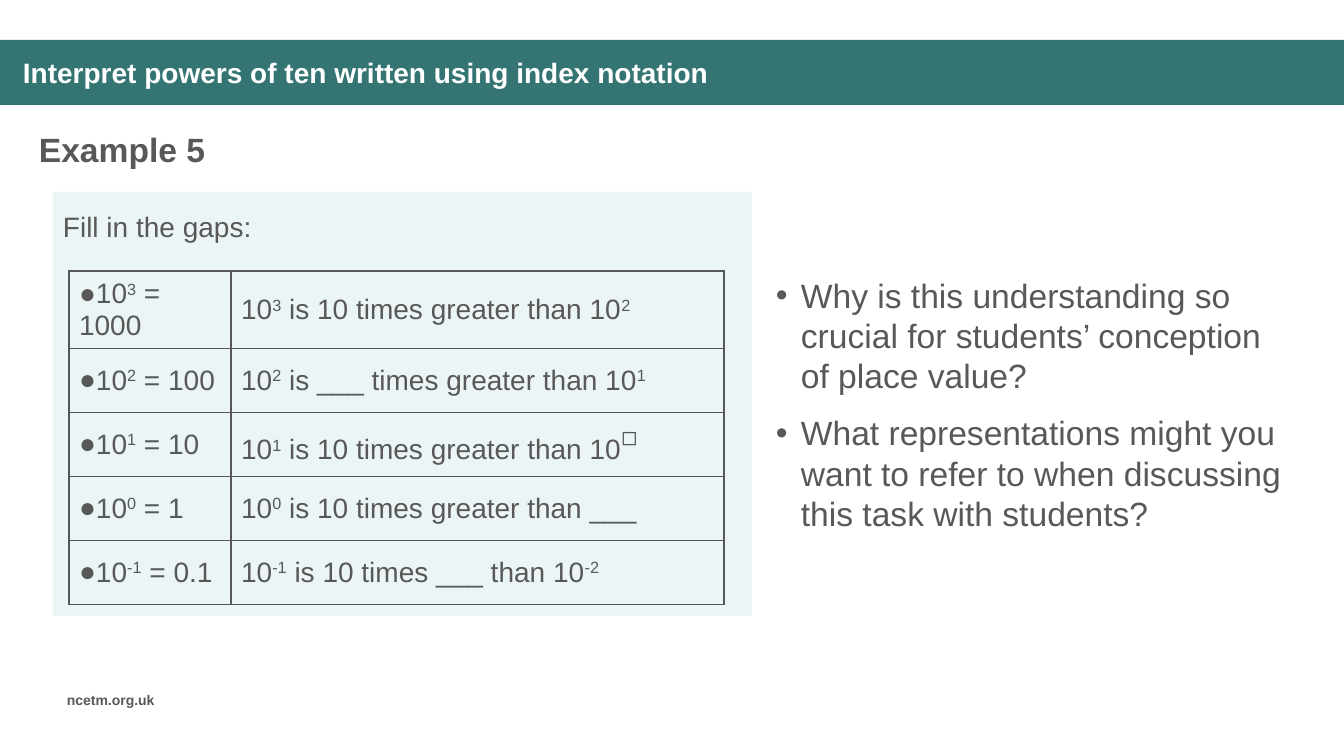
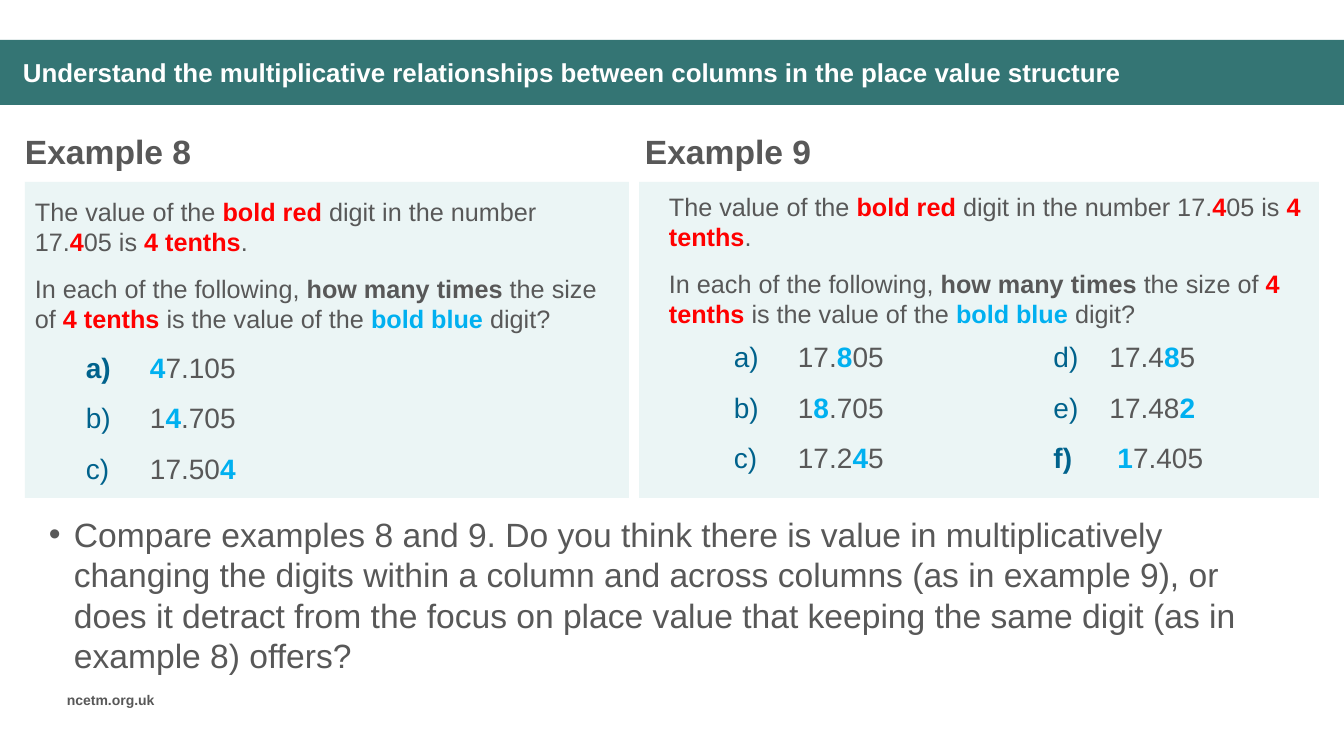
import dataclasses
import typing

import pptx
import pptx.dml.color
import pptx.enum.shapes
import pptx.enum.text
import pptx.oxml.ns
import pptx.util
from lxml import etree

EMU_PER_PIXEL = 914400 / 100.8
ANCHOR = pptx.enum.text.MSO_ANCHOR


@dataclasses.dataclass(frozen=True)
class Theme:
    font: str = "Arial"
    band: str = "347574"
    panel: str = "EBF5F5"
    text: str = "585858"
    white: str = "FFFFFF"
    number: str = "00628C"
    red: str = "FF0000"
    blue: str = "00B0F0"
    heading_size: float = 24
    body_size: float = 24
    list_size: float = 20
    question_size: float = 18
    footer_size: float = 10
    box_size: float = 32
    leading: float = 1.2
    gap: float = 12


THEME = Theme()


class Box(typing.NamedTuple):
    left: int
    top: int
    width: int
    height: int


class Run(typing.NamedTuple):
    text: str
    colour: str | None = None
    bold: bool | None = None
    raised: bool = False
    size: float | None = None


@dataclasses.dataclass(frozen=True)
class Marker:
    """A bullet character, or a letter sequence when character is None."""
    character: str | None
    margin: int = 0
    hanging: int = 0
    colour: str | None = None


@dataclasses.dataclass(frozen=True)
class Paragraph:
    runs: tuple[Run, ...]
    size: float
    marker: Marker | None = None
    colour: str = THEME.text
    bold: bool = False
    after: float = 0
    leading: float | None = THEME.leading


BODY_BULLET = Marker("•", 39, 25)
CELL_BULLET = Marker("●")
LETTER = Marker(None, 115, 64, THEME.number)
NEAR_LETTER = Marker(None, 107, 56, THEME.number)


# Units and colours
def px(length: float) -> int:
    return round(length * EMU_PER_PIXEL)


def rgb(colour: str) -> pptx.dml.color.RGBColor:
    return pptx.dml.color.RGBColor.from_string(colour)


def add_element(parent, tag: str, **attributes: str):
    element = etree.SubElement(parent, pptx.oxml.ns.qn(tag))
    for name, value in attributes.items():
        element.set(name, value)
    return element


# Text
def marked(text: str, **style) -> tuple[Run, ...]:
    """Split at bars; every second piece takes the given style."""
    pieces = enumerate(text.split("|"))
    return tuple(Run(piece, **(style if index % 2 else {}))
                 for index, piece in pieces if piece)


def red(text: str) -> Run:
    return Run(text, THEME.red, True)


def blue(text: str) -> Run:
    return Run(text, THEME.blue, True)


def set_marker(paragraph, marker: Marker) -> None:
    properties = paragraph._p.get_or_add_pPr()
    properties.set("marL", str(px(marker.margin)))
    properties.set("indent", str(px(-marker.hanging)))
    if marker.colour:
        add_element(add_element(properties, "a:buClr"), "a:srgbClr", val=marker.colour)
    add_element(properties, "a:buFont", typeface=THEME.font)
    if marker.character:
        add_element(properties, "a:buChar", char=marker.character)
    else:
        add_element(properties, "a:buAutoNum", type="alphaLcParenR")


def fill_paragraph(paragraph, content: Paragraph) -> None:
    if content.marker:
        set_marker(paragraph, content.marker)
    paragraph.space_before = pptx.util.Pt(0)
    paragraph.space_after = pptx.util.Pt(content.after)
    if content.leading:
        paragraph.line_spacing = pptx.util.Pt(content.size * content.leading)
    for piece in content.runs:
        run = paragraph.add_run()
        run.text = piece.text
        run.font.name = THEME.font
        run.font.size = pptx.util.Pt(piece.size or content.size)
        run.font.bold = content.bold if piece.bold is None else piece.bold
        run.font.color.rgb = rgb(piece.colour or content.colour)
        if piece.raised:
            run.font._element.set("baseline", "30000")


def add_text(slide, box: Box, text: str | typing.Sequence[Paragraph], *,
             anchor=ANCHOR.TOP, columns: int = 1, **style) -> None:
    """Place one styled line, or ready paragraphs, in a text box."""
    shape = slide.shapes.add_textbox(*map(px, box))
    frame = shape.text_frame
    frame.word_wrap = True
    frame.vertical_anchor = anchor
    if columns > 1:
        frame._txBody.bodyPr.set("numCol", str(columns))
        frame._txBody.bodyPr.set("spcCol", "0")
    contents = [Paragraph((Run(text),), **style)] if isinstance(text, str) else text
    for index, content in enumerate(contents):
        paragraph = frame.add_paragraph() if index else frame.paragraphs[0]
        fill_paragraph(paragraph, content)


# Shared slide parts
def add_rectangle(slide, box: Box, colour: str) -> None:
    shape = slide.shapes.add_shape(
        pptx.enum.shapes.MSO_SHAPE.RECTANGLE, *map(px, box))
    shape.shadow.inherit = False
    shape.fill.solid()
    shape.fill.fore_color.rgb = rgb(colour)
    shape.line.fill.background()


def add_frame_slide(presentation, title: str, title_size: float):
    slide = presentation.slides.add_slide(presentation.slide_layouts[6])
    add_rectangle(slide, Box(0, 40, 1344, 65), THEME.band)
    add_text(slide, Box(57, 687, 122, 27), "ncetm.org.uk",
             size=THEME.footer_size, bold=True)
    add_text(slide, Box(13, 49, 1167, 47), title, anchor=ANCHOR.MIDDLE,
             size=title_size, colour=THEME.white, bold=True, leading=None)
    return slide


def add_heading(slide, left: int, top: int, text: str) -> None:
    add_text(slide, Box(left, top, 671, 50), text,
             size=THEME.heading_size, bold=True)


def add_discussion(slide, box: Box, *prompts: str) -> None:
    add_text(slide, box, [
        Paragraph((Run(prompt),), THEME.body_size, BODY_BULLET, after=THEME.gap)
        for prompt in prompts], anchor=ANCHOR.MIDDLE)


# Table of powers
POWERS = (
    ("10|3| = 1000", "10|3| is 10 times greater than 10|2|"),
    ("10|2| = 100", "10|2| is ___ times greater than 10|1|"),
    ("10|1| = 10", "10|1| is 10 times greater than 10|◻|"),
    ("10|0| = 1", "10|0| is 10 times greater than ___"),
    ("10|-1| = 0.1", "10|-1| is 10 times ___ than 10|-2|"),
)


def index_runs(text: str) -> tuple[Run, ...]:
    return tuple(run._replace(size=THEME.box_size) if run.text == "◻" else run
                 for run in marked(text, raised=True))


def outline_cell(cell) -> None:
    properties = cell._tc.get_or_add_tcPr()
    for side in ("a:lnL", "a:lnR", "a:lnT", "a:lnB"):
        line = add_element(properties, side, w=str(pptx.util.Pt(1)))
        add_element(add_element(line, "a:solidFill"), "a:srgbClr", val=THEME.text)


def add_powers_table(slide) -> None:
    widths, heights = (162, 493), (77, 64, 64, 64, 64)
    box = Box(69, 271, sum(widths), sum(heights))
    table = slide.shapes.add_table(len(POWERS), len(widths), *map(px, box)).table
    table.first_row = table.horz_banding = False
    for column, width in zip(table.columns, widths):
        column.width = px(width)
    for row, height, texts in zip(table.rows, heights, POWERS):
        row.height = px(height)
        for cell, text, marker in zip(row.cells, texts, (CELL_BULLET, None)):
            outline_cell(cell)
            cell.fill.background()
            cell.vertical_anchor = ANCHOR.MIDDLE
            fill_paragraph(cell.text_frame.paragraphs[0], Paragraph(
                index_runs(text), THEME.list_size, marker, leading=None))


# Place value questions
QUESTION = tuple(Paragraph(runs, THEME.question_size, after=THEME.gap) for runs in (
    (Run("The value of the "), red("bold red "), Run("digit in the number 17."),
     red("4"), Run("05 is "), red("4 tenths"), Run(".")),
    (Run("In each of the following, "), Run("how many times ", bold=True),
     Run("the size of "), red("4 tenths "), Run("is the value of the "),
     blue("bold blue "), Run("digit?")),
))


def lettered(*numbers: str, marker: Marker = LETTER) -> tuple[Paragraph, ...]:
    return tuple(Paragraph(marked(number, colour=THEME.blue, bold=True),
                           THEME.list_size, marker, after=THEME.gap)
                 for number in numbers)


def build_powers_slide(presentation) -> None:
    slide = add_frame_slide(
        presentation, "Interpret powers of ten written using index notation", 20)
    add_discussion(
        slide, Box(752, 192, 539, 424),
        "Why is this understanding so crucial for students’ conception of place value?",
        "What representations might you want to refer to when discussing this task"
        " with students?")
    add_rectangle(slide, Box(53, 192, 699, 424), THEME.panel)
    add_heading(slide, 29, 124, "Example 5")
    add_text(slide, Box(53, 205, 682, 44), "Fill in the gaps:", size=THEME.list_size)
    add_powers_table(slide)


def build_columns_slide(presentation) -> None:
    slide = add_frame_slide(
        presentation, "Understand the multiplicative relationships between columns"
        " in the place value structure", 18.5)
    add_discussion(
        slide, Box(25, 482, 1274, 225),
        "Compare examples 8 and 9. Do you think there is value in multiplicatively"
        " changing the digits within a column and across columns (as in example 9),"
        " or does it detract from the focus on place value that keeping the same"
        " digit (as in example 8) offers?")
    # Example 8
    add_rectangle(slide, Box(25, 182, 604, 316), THEME.panel)
    add_heading(slide, 15, 126, "Example 8")
    add_text(slide, Box(25, 191, 583, 302),
             QUESTION + lettered("|4|7.105", "1|4|.705", "17.50|4|"))
    # Example 9
    add_rectangle(slide, Box(639, 182, 680, 316), THEME.panel)
    add_heading(slide, 635, 126, "Example 9")
    add_text(slide, Box(659, 186, 660, 149), QUESTION)
    add_text(slide, Box(673, 335, 659, 163),
             lettered("17.|8|05", "1|8|.705", "17.2|4|5")
             + lettered("17.4|8|5", "17.48|2|", marker=NEAR_LETTER)
             + lettered("|1|7.405"), columns=2)


def main() -> None:
    presentation = pptx.Presentation()
    presentation.slide_width = px(1344)
    presentation.slide_height = px(756)
    build_powers_slide(presentation)
    build_columns_slide(presentation)
    presentation.save("out.pptx")


if __name__ == "__main__":
    main()
